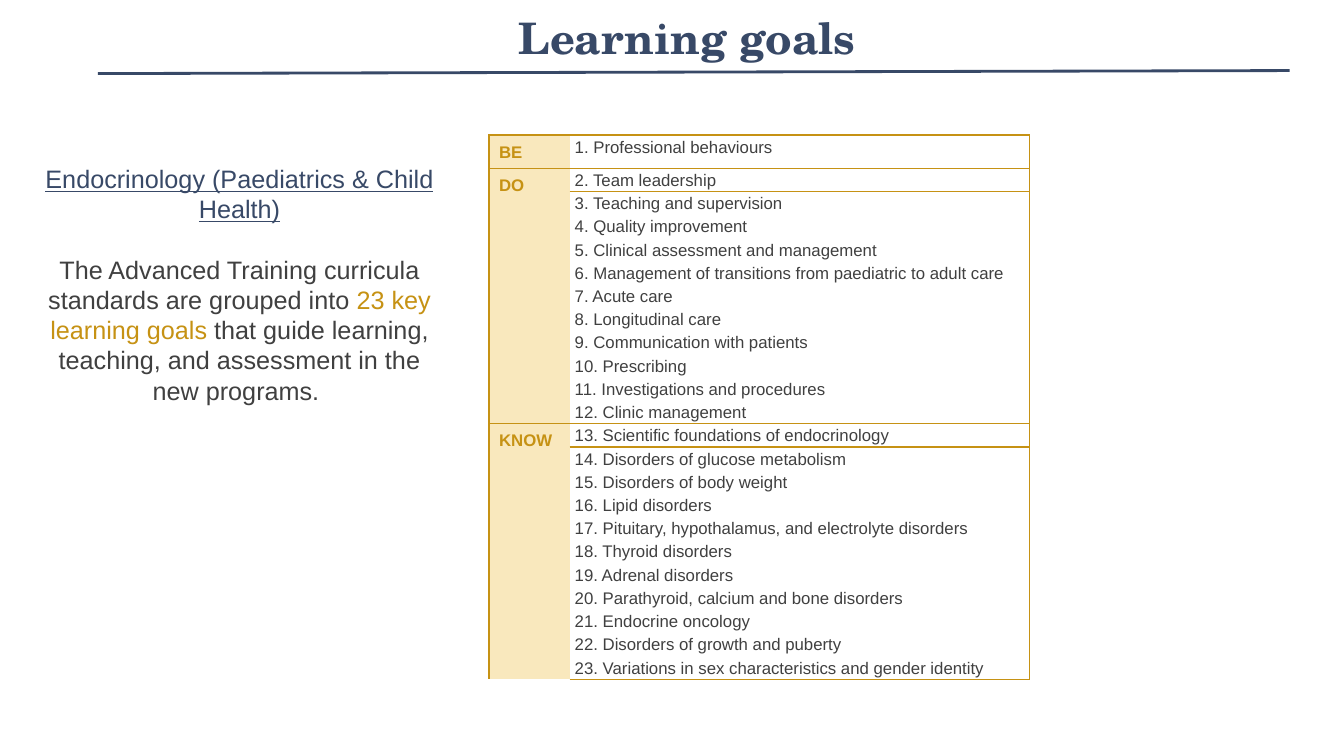
import pptx
import pptx.util
import pptx.dml.color
import pptx.enum.text
import pptx.enum.shapes
import pptx.oxml.ns
import lxml.etree

NAVY, GOLD, CREAM, GREY = "384967", "C69214", "F9E8BD", "404040"
TITLE = "Learning goals"
COURSE = "Endocrinology (Paediatrics & Child Health)"
INTRO = [
    ("The Advanced Training curricula standards are grouped into ", GREY),
    ("23 key learning goals", GOLD),
    (" that guide learning, teaching, and assessment in the new programs. ", GREY),
]
GROUPS = [
    ("BE", 0.33, ["Professional behaviours"]),
    ("DO", 2.53, [
        "Team leadership", "Teaching and supervision", "Quality improvement",
        "Clinical assessment and management",
        "Management of transitions from paediatric to adult care",
        "Acute care", "Longitudinal care", "Communication with patients",
        "Prescribing", "Investigations and procedures", "Clinic management"]),
    ("KNOW", 2.5, [
        "Scientific foundations of endocrinology",
        "Disorders of glucose metabolism", "Disorders of body weight",
        "Lipid disorders",
        "Pituitary, hypothalamus, and electrolyte disorders",
        "Thyroid disorders", "Adrenal disorders",
        "Parathyroid, calcium and bone disorders", "Endocrine oncology",
        "Disorders of growth and puberty",
        "Variations in sex characteristics and gender identity"]),
]
COLS = [0.8, 4.56]

Inches, Pt = pptx.util.Inches, pptx.util.Pt
CENTER = pptx.enum.text.PP_ALIGN.CENTER
MIDDLE = pptx.enum.text.MSO_ANCHOR.MIDDLE
qn = pptx.oxml.ns.qn


def tint(code):
    return pptx.dml.color.RGBColor.from_string(code)


def style(font, size, color, name="Arial", bold=False):
    font.size, font.name, font.bold = Pt(size), name, bold
    font.color.rgb = tint(color)


def frame(*box):
    text = slide.shapes.add_textbox(*map(Inches, box)).text_frame
    text.word_wrap = True
    return text


def edge(cell, sides):
    props = cell._tc.get_or_add_tcPr()
    for side in "LRTB":
        line = lxml.etree.SubElement(props, qn("a:ln" + side), w=str(Pt(1)))
        if side in sides:
            fill = lxml.etree.SubElement(line, qn("a:solidFill"))
            lxml.etree.SubElement(fill, qn("a:srgbClr"), val=GOLD)
        else:
            lxml.etree.SubElement(line, qn("a:noFill"))


def write(cell, text, color, bold=False):
    para = cell.text_frame.paragraphs[0]
    para.text = text
    para.line_spacing = 1.15
    style(para.font, 12, color, bold=bold)


deck = pptx.Presentation()
deck.slide_width, deck.slide_height = Inches(13.33), Inches(7.5)
slide = deck.slides.add_slide(deck.slide_layouts[6])

head = frame(1.53, 0, 10.57, 0.73)
head.vertical_anchor = MIDDLE
para = head.paragraphs[0]
para.text, para.alignment = TITLE, CENTER
style(para.font, 31, NAVY, "TeX Gyre Schola", True)

rule = slide.shapes.add_connector(
    pptx.enum.shapes.MSO_CONNECTOR.STRAIGHT,
    *map(Inches, (0.97, 0.73, 12.79, 0.7)))
rule.line.color.rgb, rule.line.width = tint(NAVY), Pt(2)
lxml.etree.SubElement(rule._element.spPr, qn("a:effectLst"))

side = frame(0.3, 1.57, 4.15, 2.52)
para = side.paragraphs[0]
para.text, para.alignment, para.space_after = COURSE, CENTER, Pt(21.6)
style(para.font, 18, NAVY)
para.font.underline = True
para = side.add_paragraph()
para.alignment = CENTER
for text, color in INTRO:
    run = para.add_run()
    run.text = text
    style(run.font, 18, color)

count = sum(len(goals) for _, _, goals in GROUPS)
tall = sum(height for _, height, _ in GROUPS)
table = slide.shapes.add_table(
    count, 2, *map(Inches, (4.85, 1.34, sum(COLS), tall))).table
table.first_row = table.horz_banding = False
for col, width in zip(table.columns, COLS):
    col.width = Inches(width)

row = 0
for label, height, goals in GROUPS:
    first, last = row, row + len(goals) - 1
    for goal in goals:
        table.rows[row].height = Inches(height / len(goals))
        left, right = table.cell(row, 0), table.cell(row, 1)
        top = "T" if row in (first, first + 1) else ""
        base = "B" if row in (first, last) else ""
        edge(left, "L" + ("T" if row == first else "") + ("B" if row == last else ""))
        edge(right, "R" + top + base)
        left.fill.solid()
        left.fill.fore_color.rgb = tint(CREAM)
        right.fill.background()
        right.margin_left = right.margin_right = Inches(0.05)
        right.margin_top = right.margin_bottom = 0
        row += 1
        write(right, f"{row}. {goal}", GREY)
    name = table.cell(first, 0)
    if last > first:
        name.merge(table.cell(last, 0))
    write(name, label, GOLD, True)

deck.save("out.pptx")
